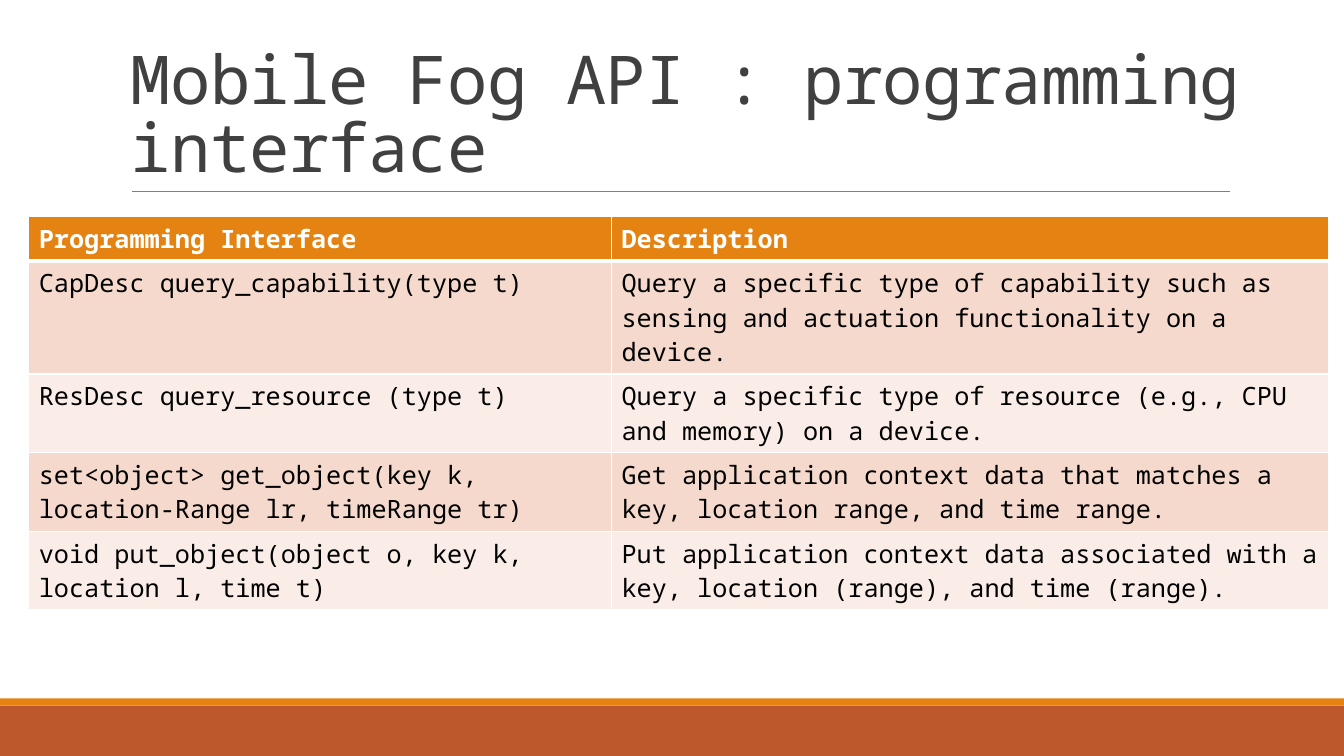
from lxml import etree
from pptx import Presentation
from pptx.dml.color import RGBColor
from pptx.enum.shapes import MSO_CONNECTOR, MSO_SHAPE
from pptx.enum.text import MSO_ANCHOR
from pptx.oxml.ns import qn
from pptx.util import Inches, Pt

RECTANGLE = MSO_SHAPE.RECTANGLE
STRAIGHT = MSO_CONNECTOR.STRAIGHT
BOTTOM = MSO_ANCHOR.BOTTOM

TITLE = "Mobile Fog API : programming interface"
ROWS = [
    ("Programming Interface", "Description"),
    ("CapDesc query_capability(type t)",
     "Query a specific type of capability such as sensing and actuation functionality on a device."),
    ("ResDesc query_resource (type t)",
     "Query a specific type of resource (e.g., CPU and memory) on a device."),
    ("set<object> get_object(key k, location-Range lr, timeRange tr)",
     "Get application context data that matches a key, location range, and time range."),
    ("void put_object(object o, key k, location l, time t)",
     "Put application context data associated with a key, location (range), and time (range)."),
]
LINES_PER_ROW = (1, 3, 2, 2, 2)
COLORS = {
    "footer": "BD582C", "header": "E48312", "rule": "808080", "title": "404040",
    "odd": "F5D9CC", "even": "FAEDE7", "white": "FFFFFF", "black": "000000",
}
FONT = "Noto Sans Mono"
WIDTH, HEIGHT = 13.33, 7.5
FOOTER_TOP, STRIPE_HEIGHT = 7, 0.07
RULE_LEFT, RULE_RIGHT, RULE_TOP = 1.31, 12.2, 1.9
TITLE_BOX = (1.2, 0.31, 11.76, 1.59)
TABLE_LEFT, TABLE_TOP = 0.285, 2.15
COLUMN_WIDTHS = (5.78, 7.11)
LINE_HEIGHT, ROW_PADDING = 0.34, 0.1
FORMATS = {
    "title": {"name": FONT, "size": Pt(48), "bold": False},
    "header": {"name": FONT, "size": Pt(18), "bold": True},
    "body": {"name": FONT, "size": Pt(18), "bold": False},
}


def color(name):
    return RGBColor.from_string(COLORS[name])


def write(paragraph, text, style, color_name):
    run = paragraph.add_run()
    run.text = text
    for attribute, value in FORMATS[style].items():
        setattr(run.font, attribute, value)
    run.font.color.rgb = color(color_name)
    return run


def add_bar(slide, top, height, color_name):
    bar = slide.shapes.add_shape(RECTANGLE, 0, Inches(top), Inches(WIDTH), Inches(height))
    bar.shadow.inherit = False
    bar.fill.solid()
    bar.fill.fore_color.rgb = color(color_name)
    bar.line.fill.background()


def add_rule(slide):
    rule = slide.shapes.add_connector(
        STRAIGHT, Inches(RULE_LEFT), Inches(RULE_TOP), Inches(RULE_RIGHT), Inches(RULE_TOP))
    rule.line.color.rgb = color("rule")
    rule.line.width = Pt(0.5)
    etree.SubElement(rule.element.spPr, qn("a:effectLst"))


def add_title(slide):
    frame = slide.shapes.add_textbox(*map(Inches, TITLE_BOX)).text_frame
    frame.word_wrap = True
    frame.vertical_anchor = BOTTOM
    paragraph = frame.paragraphs[0]
    paragraph.line_spacing = 0.85
    run = write(paragraph, TITLE, "title", "title")
    run._r.get_or_add_rPr().set("spc", "-50")


def set_borders(cell, widths):
    properties = cell._tc.get_or_add_tcPr()
    for position, (side, width) in enumerate(widths.items()):
        line = etree.Element(qn(f"a:ln{side}"), w=str(Pt(width)))
        fill = etree.SubElement(line, qn("a:solidFill"))
        etree.SubElement(fill, qn("a:srgbClr"), val=COLORS["white"])
        properties.insert(position, line)


def add_api_table(slide):
    row_heights = [ROW_PADDING + LINE_HEIGHT * lines for lines in LINES_PER_ROW]
    table = slide.shapes.add_table(
        len(ROWS), len(COLUMN_WIDTHS), Inches(TABLE_LEFT), Inches(TABLE_TOP),
        Inches(sum(COLUMN_WIDTHS)), Inches(sum(row_heights))).table
    for column, width in zip(table.columns, COLUMN_WIDTHS):
        column.width = Inches(width)
    for row_index, (texts, height) in enumerate(zip(ROWS, row_heights)):
        table.rows[row_index].height = Inches(height)
        is_header = row_index == 0
        style, text_color = ("header", "white") if is_header else ("body", "black")
        fill_name = "header" if is_header else ("even", "odd")[row_index % 2]
        widths = {"L": 1, "R": 1, "T": 3 if row_index == 1 else 1, "B": 3 if is_header else 1}
        for column_index, text in enumerate(texts):
            cell = table.cell(row_index, column_index)
            write(cell.text_frame.paragraphs[0], text, style, text_color)
            cell.fill.solid()
            cell.fill.fore_color.rgb = color(fill_name)
            set_borders(cell, widths)


def main():
    presentation = Presentation()
    presentation.slide_width = Inches(WIDTH)
    presentation.slide_height = Inches(HEIGHT)
    slide = presentation.slides.add_slide(presentation.slide_layouts[6])
    add_bar(slide, FOOTER_TOP, HEIGHT - FOOTER_TOP, "footer")
    add_bar(slide, FOOTER_TOP - STRIPE_HEIGHT, STRIPE_HEIGHT, "header")
    add_rule(slide)
    add_title(slide)
    add_api_table(slide)
    presentation.save("out.pptx")


if __name__ == "__main__":
    main()
